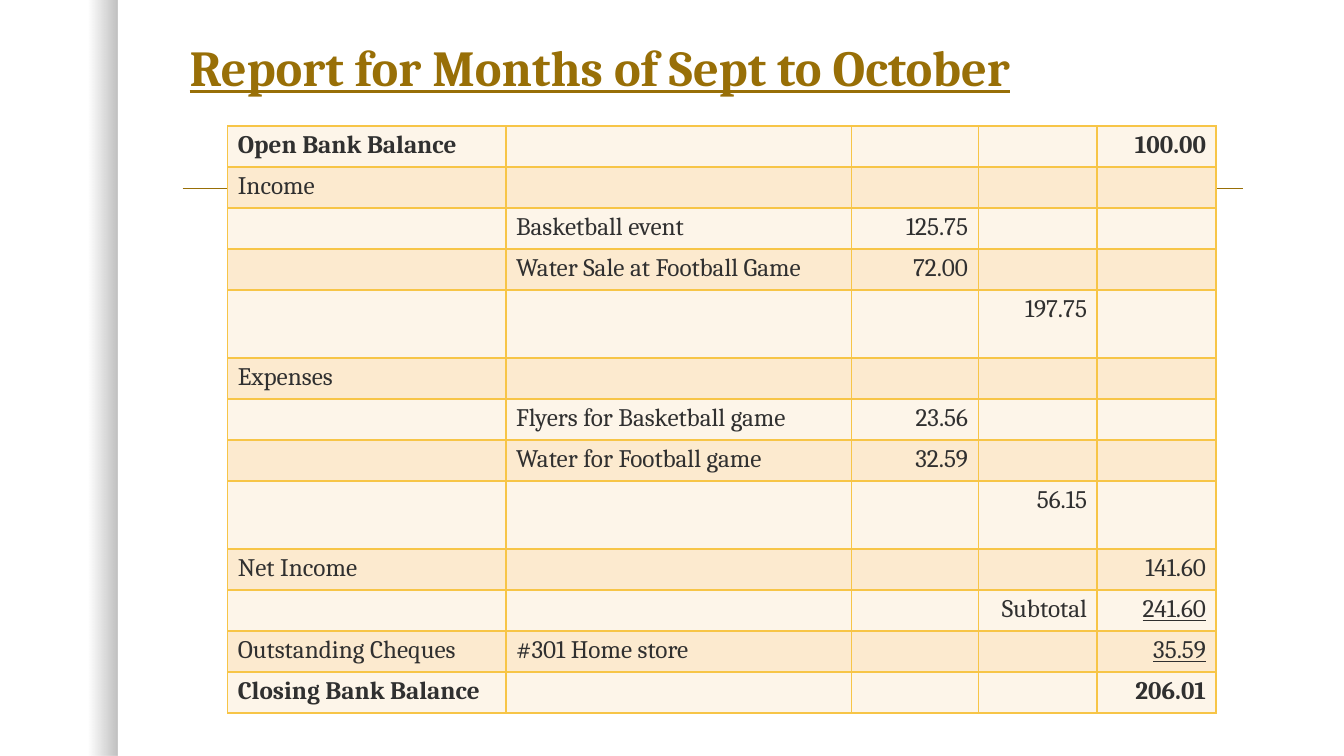
from lxml.etree import SubElement
from pptx import Presentation
from pptx.dml.color import RGBColor
from pptx.enum.shapes import MSO_CONNECTOR as Connector, MSO_SHAPE as Shape
from pptx.enum.text import MSO_ANCHOR as Anchor, PP_ALIGN as Align
from pptx.oxml import parse_xml
from pptx.oxml.ns import nsdecls, qn
from pptx.util import Pt

BLACK = RGBColor(0x00, 0x00, 0x00)
BRONZE = RGBColor(0x98, 0x6F, 0x07)
CHARCOAL = RGBColor(0x30, 0x30, 0x30)
GOLD = RGBColor(0xF7, 0xC5, 0x47)
CREAM = RGBColor(0xFD, 0xF5, 0xE9)
PEACH = RGBColor(0xFC, 0xEA, 0xCF)

COLUMN_WIDTHS = [198.7, 246.6, 90.7, 85, 85]
ROW_HEIGHT, TOTAL_ROW_HEIGHT = 29.3, 48.6
FIRST_NUMBER_COLUMN = 2
TOTAL_ROWS = {4, 8}
BOLD_ROWS = {0, 12}
UNDERLINED_CELLS = {(10, 4), (11, 4)}
REPORT = [
    ["Open Bank Balance", "", "", "", "100.00"],
    ["Income", "", "", "", ""],
    ["", "Basketball event", "125.75", "", ""],
    ["", "Water Sale at Football Game", "72.00", "", ""],
    ["", "", "", "197.75", ""],
    ["Expenses", "", "", "", ""],
    ["", "Flyers for Basketball game", "23.56", "", ""],
    ["", "Water for Football game", "32.59", "", ""],
    ["", "", "", "56.15", ""],
    ["Net Income", "", "", "", "141.60"],
    ["", "", "", "Subtotal", "241.60"],
    ["Outstanding Cheques", "#301 Home store", "", "", "35.59"],
    ["Closing Bank Balance", "", "", "", "206.01"],
]


def write(paragraph, text, **format_values):
    run = paragraph.add_run()
    run.text = text
    color = format_values.pop("color")
    for name, value in format_values.items():
        setattr(run.font, name, value)
    run.font.color.rgb = color


def add_borders(cell):
    properties = cell._tc.get_or_add_tcPr()
    for index, side in enumerate(["lnL", "lnR", "lnT", "lnB"]):
        border = parse_xml(
            f'<a:{side} {nsdecls("a")} w="{Pt(1)}"><a:solidFill>'
            f'<a:srgbClr val="{GOLD}"/></a:solidFill></a:{side}>'
        )
        properties.insert(index, border)


presentation = Presentation()
presentation.slide_width, presentation.slide_height = Pt(960), Pt(540)
slide = presentation.slides.add_slide(presentation.slide_layouts[6])

side_shade = slide.shapes.add_shape(Shape.RECTANGLE, 0, 0, Pt(83.9), Pt(540))
side_shade.shadow.inherit = False
side_shade.line.fill.background()
side_shade.fill.gradient()
side_shade.fill.gradient_angle = 0
for stop, position, opacity in zip(side_shade.fill.gradient_stops, [0.75, 1], [0, 25]):
    stop.position = position
    stop.color.rgb = BLACK
for color, opacity in zip(side_shade._element.spPr.iter(qn("a:srgbClr")), [0, 25]):
    SubElement(color, qn("a:alpha")).set("val", str(opacity * 1000))

rule = slide.shapes.add_connector(Connector.STRAIGHT, Pt(130.5), Pt(134.5), Pt(887.8), Pt(134.5))
rule.line.color.rgb = BRONZE
rule.line.width = Pt(1)
SubElement(rule._element.spPr, qn("a:effectLst"))

title = slide.shapes.add_textbox(Pt(128.4), Pt(2), Pt(774), Pt(96))
title.text_frame.word_wrap = True
title.text_frame.vertical_anchor = Anchor.MIDDLE
title_paragraph = title.text_frame.paragraphs[0]
title_paragraph.line_spacing = 0.9
write(title_paragraph, "Report for Months of Sept to October", name="Cambria", size=Pt(36),
      bold=True, underline=True, color=BRONZE)

row_heights = [TOTAL_ROW_HEIGHT if row in TOTAL_ROWS else ROW_HEIGHT for row in range(len(REPORT))]
table = slide.shapes.add_table(len(REPORT), len(COLUMN_WIDTHS), Pt(162.7), Pt(90),
                               Pt(sum(COLUMN_WIDTHS)), Pt(sum(row_heights))).table
for column, width in zip(table.columns, COLUMN_WIDTHS):
    column.width = Pt(width)

for row, (values, height) in enumerate(zip(REPORT, row_heights)):
    table.rows[row].height = Pt(height)
    for column, text in enumerate(values):
        cell = table.cell(row, column)
        cell.fill.solid()
        cell.fill.fore_color.rgb = PEACH if row % 2 else CREAM
        add_borders(cell)
        paragraph = cell.text_frame.paragraphs[0]
        if column >= FIRST_NUMBER_COLUMN:
            paragraph.alignment = Align.RIGHT
        if text:
            write(paragraph, text, name="Cambria", size=Pt(18), bold=row in BOLD_ROWS,
                  underline=(row, column) in UNDERLINED_CELLS, color=CHARCOAL)

presentation.save("out.pptx")
